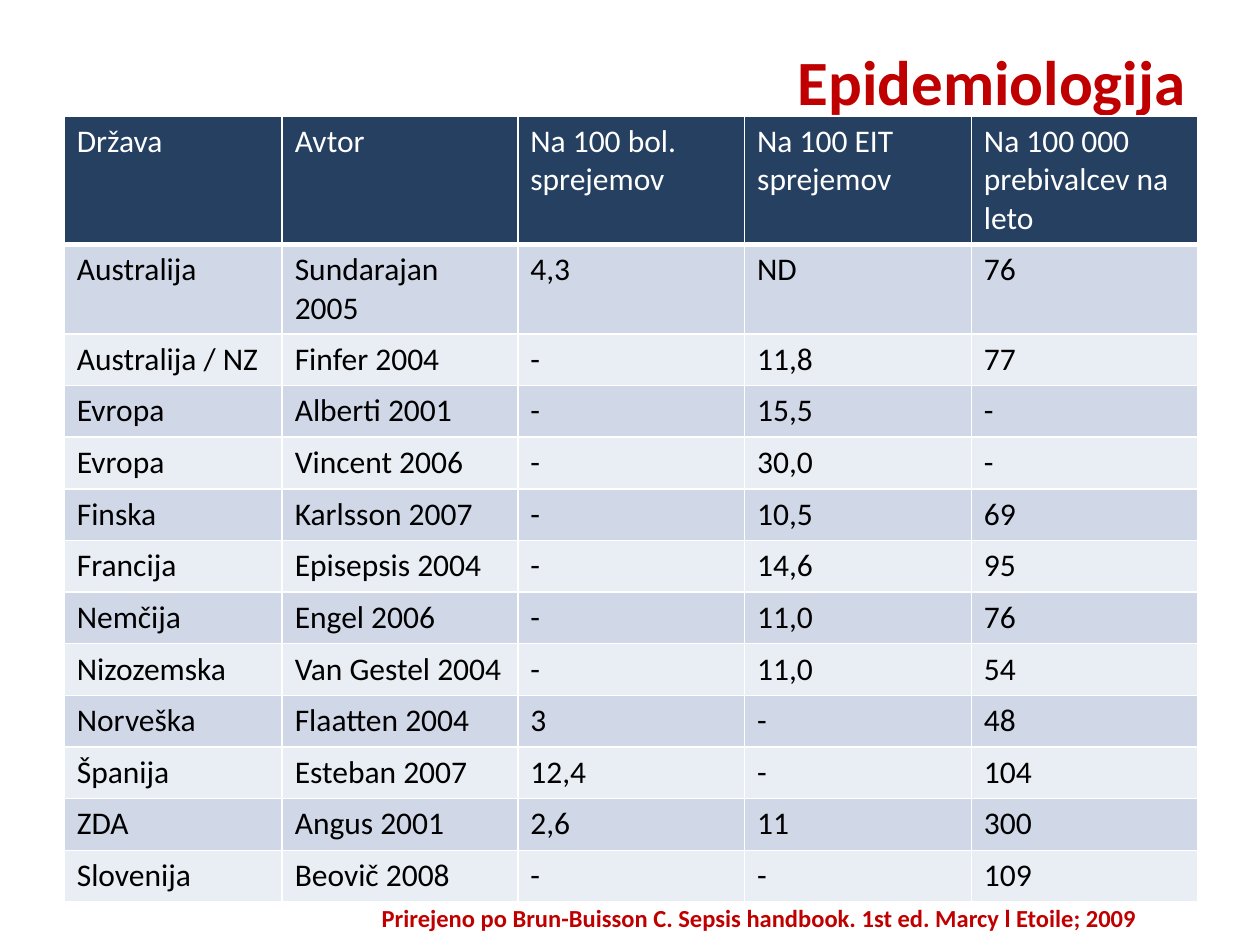
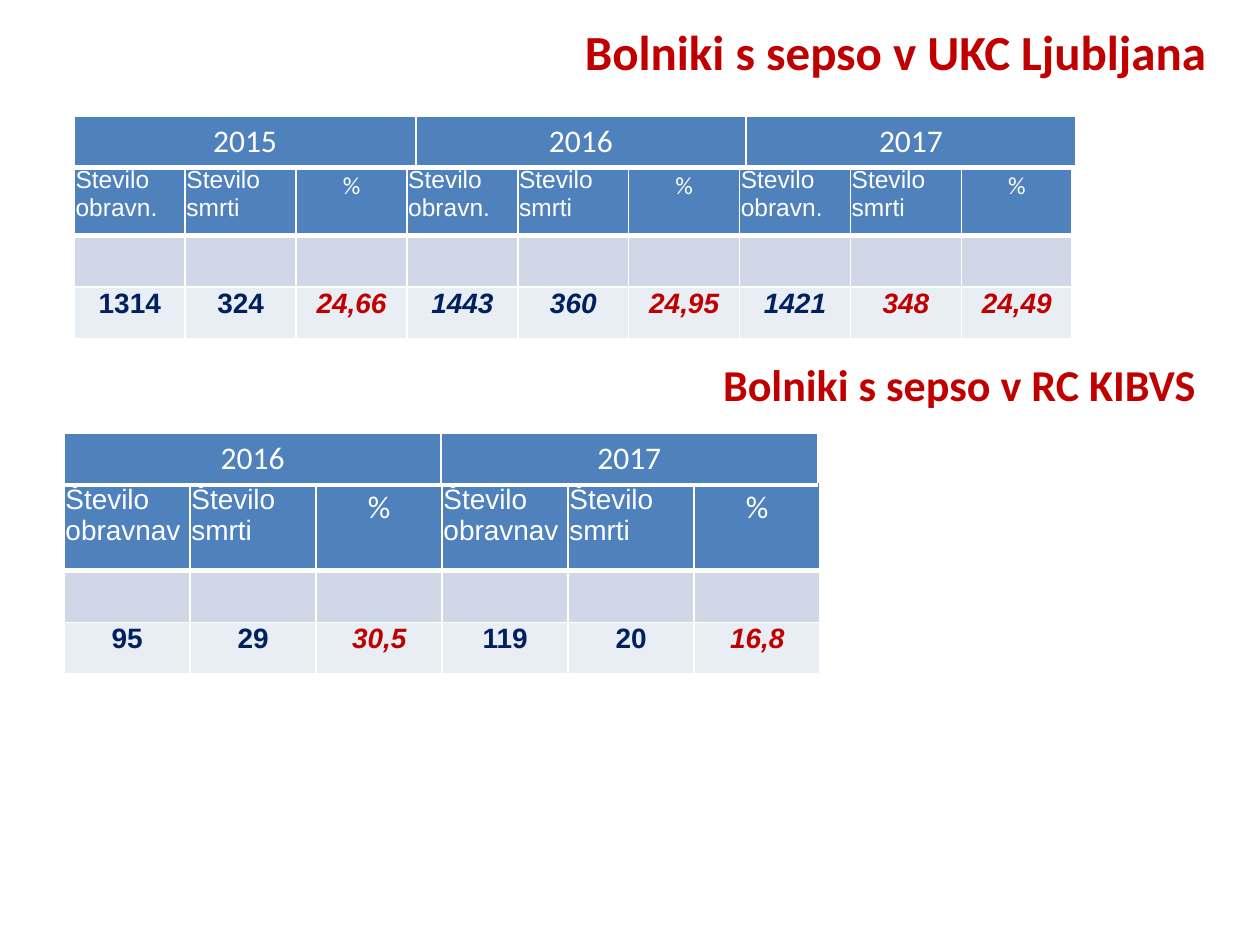
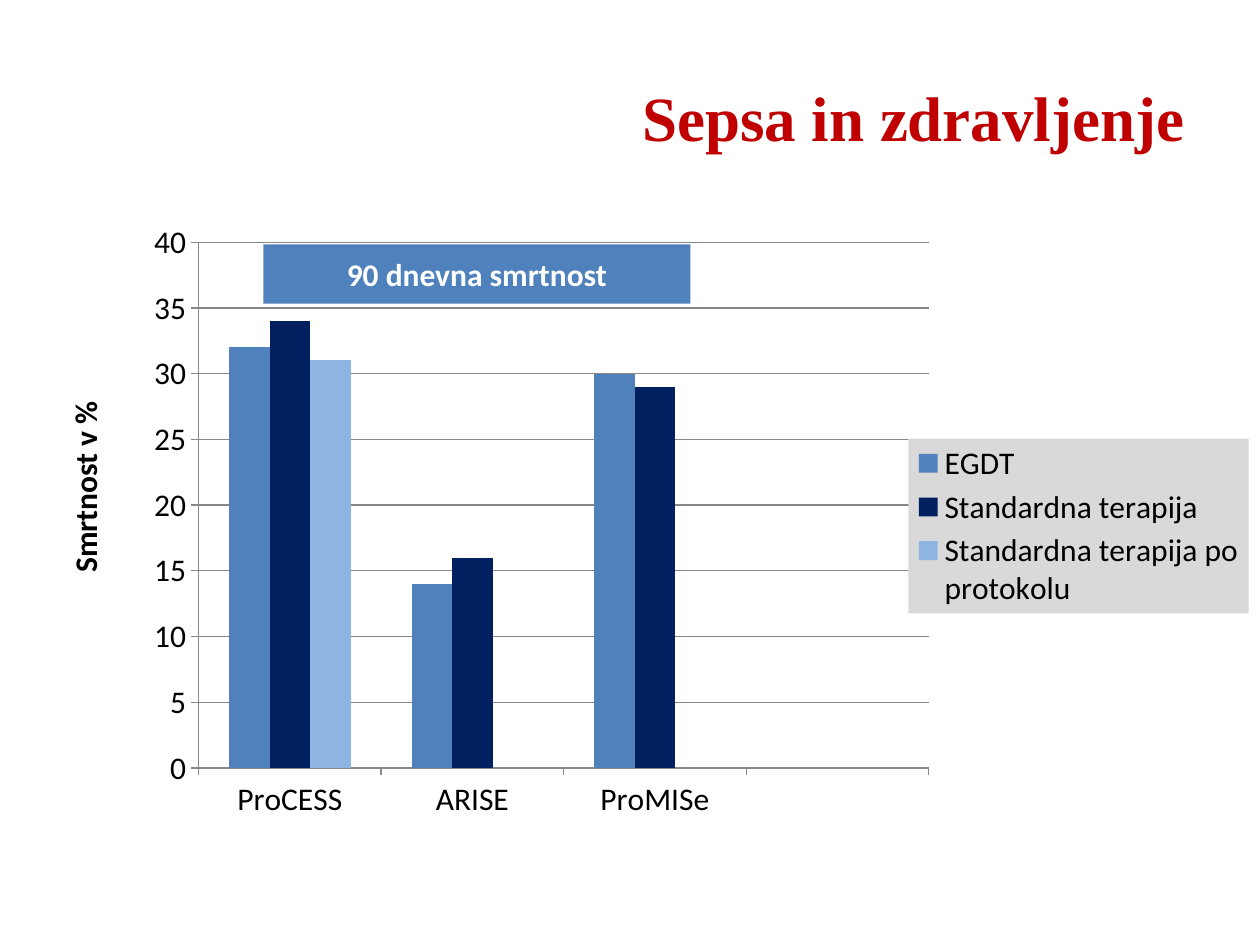
from dataclasses import dataclass

from lxml.etree import SubElement
from pptx import Presentation
from pptx.chart.data import CategoryChartData
from pptx.dml.color import RGBColor
from pptx.enum.chart import XL_CHART_TYPE as ChartType
from pptx.enum.chart import XL_LEGEND_POSITION as LegendPos
from pptx.enum.chart import XL_TICK_MARK as Tick
from pptx.enum.shapes import MSO_SHAPE as Shape
from pptx.enum.text import MSO_ANCHOR as Anchor
from pptx.enum.text import PP_ALIGN as Align
from pptx.oxml import parse_xml
from pptx.oxml.ns import nsdecls, qn
from pptx.util import Inches, Pt


@dataclass(frozen=True)
class Theme:
    red: str = "C00000"
    navy: str = "002060"
    header: str = "254061"
    blue: str = "4F81BD"
    light_blue: str = "8EB4E3"
    bands: tuple = ("D0D8E8", "E9EDF4")
    grid: str = "878787"
    legend: str = "D9D9D9"
    white: str = "FFFFFF"
    black: str = "000000"
    body_font: str = "Calibri"
    number_font: str = "Arial"
    serif_font: str = "Times New Roman"
    title: float = 36
    subtitle: float = 28
    small_title: float = 25.2
    body: float = 18
    number: float = 16
    note: float = 14


T = Theme()
ROW = 0.41
TIGHT = (0.01, 0.01, 0.01, 0)

INCIDENCE = [
    ("Država", "Avtor", "Na 100 bol. sprejemov", "Na 100 EIT sprejemov",
     "Na 100 000 prebivalcev na leto"),
    ("Australija", "Sundarajan 2005", "4,3", "ND", "76"),
    ("Australija / NZ", "Finfer 2004", "-", "11,8", "77"),
    ("Evropa", "Alberti 2001", "-", "15,5", "-"),
    ("Evropa", "Vincent 2006", "-", "30,0", "-"),
    ("Finska", "Karlsson 2007", "-", "10,5", "69"),
    ("Francija", "Episepsis 2004", "-", "14,6", "95"),
    ("Nemčija", "Engel 2006", "-", "11,0", "76"),
    ("Nizozemska", "Van Gestel 2004", "-", "11,0", "54"),
    ("Norveška", "Flaatten 2004", "3", "-", "48"),
    ("Španija", "Esteban 2007", "12,4", "-", "104"),
    ("ZDA", "Angus 2001", "2,6", "11", "300"),
    ("Slovenija", "Beovič 2008", "-", "-", "109"),
]

# Each value: text, colour, italic
UKC_VALUES = [
    ("1314", T.navy, False), ("324", T.navy, False), ("24,66", T.red, True),
    ("1443", T.navy, True), ("360", T.navy, True), ("24,95", T.red, True),
    ("1421", T.navy, True), ("348", T.red, True), ("24,49", T.red, True),
]
KIBVS_VALUES = [
    ("95", T.navy, False), ("29", T.navy, False), ("30,5", T.red, True),
    ("119", T.navy, False), ("20", T.navy, False), ("16,8", T.red, True),
]

TRIALS = ("ProCESS", "ARISE", "ProMISe", "")
MORTALITY = [
    ("EGDT", (32, 14, 30, None), T.blue),
    ("Standardna terapija", (34, 16, 29, None), T.navy),
    ("Standardna terapija po protokolu", (31, None, None, None), T.light_blue),
]


def rgb(color):
    return RGBColor.from_string(color)


def set_font(font, size, color, name=T.body_font, bold=False, italic=False):
    font.size, font.name = Pt(size), name
    font.bold, font.italic = bold, italic
    font.color.rgb = rgb(color)


def set_fill(fill, color):
    fill.solid()
    fill.fore_color.rgb = rgb(color)


def set_text(tf, text, size, color, align=Align.LEFT, **font):
    tf.text = text
    p = tf.paragraphs[0]
    p.alignment = align
    set_font(p.runs[0].font, size, color, **font)


def add_text(slide, box, text, size, color=T.red, align=Align.CENTER,
             rotation=0, **font):
    sp = slide.shapes.add_textbox(*map(Inches, box))
    sp.rotation = rotation
    tf = sp.text_frame
    tf.word_wrap = True
    tf.vertical_anchor = Anchor.MIDDLE
    set_text(tf, text, size, color, align, bold=True, **font)


def add_title(slide, box, text, size, **font):
    add_text(slide, box, text, size, align=Align.RIGHT, **font)


def add_grid(slide, left, top, widths, heights):
    sp = slide.shapes.add_table(len(heights), len(widths), Inches(left), Inches(top),
                                Inches(sum(widths)), Inches(sum(heights)))
    table = sp.table
    table.horz_banding = False
    for column, width in zip(table.columns, widths):
        column.width = Inches(width)
    for row, height in zip(table.rows, heights):
        row.height = Inches(height)
    return table


def style_cell(cell, fill, bottom=1):
    """White borders and a solid fill; bottom is the lower border in points."""
    tc_pr = cell._tc.get_or_add_tcPr()
    for side, width in (("L", 1), ("R", 1), ("T", 1), ("B", bottom)):
        ln = SubElement(tc_pr, qn(f"a:ln{side}"), w=str(Pt(width)))
        solid = SubElement(ln, qn("a:solidFill"))
        SubElement(solid, qn("a:srgbClr"), val=T.white)
    set_fill(cell.fill, fill)


def set_margins(cell, margins):
    (cell.margin_left, cell.margin_top,
     cell.margin_right, cell.margin_bottom) = map(Inches, margins)


def add_incidence_table(slide):
    heights = [1.02, 0.71] + [ROW] * (len(INCIDENCE) - 2)
    table = add_grid(slide, 0.51, 0.92, [1.73, 1.87, 1.8, 1.8, 1.8], heights)
    for i, row in enumerate(INCIDENCE):
        for j, text in enumerate(row):
            cell = table.cell(i, j)
            if i == 0:
                style_cell(cell, T.header, bottom=3)
            else:
                style_cell(cell, T.bands[(i - 1) % 2])
            set_text(cell.text_frame, text, T.body, T.black if i else T.white)


def add_year_table(slide, left, top, years, widths):
    table = add_grid(slide, left, top, widths, [ROW])
    for j, year in enumerate(years):
        cell = table.cell(0, j)
        style_cell(cell, T.blue, bottom=3)
        set_text(cell.text_frame, year, T.body, T.white, Align.CENTER)


def add_outcome_table(slide, left, top, col_width, head_height, cases, values,
                      label_size, percent_size):
    """Cases, deaths and percentage for each year, side by side."""
    table = add_grid(slide, left, top, [col_width] * len(values),
                     [head_height, ROW, ROW])
    labels = (cases, "Število smrti", "%")
    for j, (value, color, italic) in enumerate(values):
        head, gap, result = (table.cell(i, j) for i in range(3))
        style_cell(head, T.blue, bottom=3)
        style_cell(gap, T.bands[0])
        style_cell(result, T.bands[1])
        label = labels[j % 3]
        if label == "%":
            set_text(head.text_frame, label, percent_size, T.white, Align.CENTER)
        else:
            set_margins(head, TIGHT)
            set_text(head.text_frame, label, label_size, T.white, name=T.number_font)
        set_margins(result, TIGHT)
        set_text(result.text_frame, value, T.number, color, Align.CENTER,
                 name=T.number_font, bold=True, italic=italic)


def set_layout(element, x, y, w, h, inner=False):
    """Place a plot area or legend by fractions of the chart's size."""
    for old in element.findall(qn("c:layout")):
        element.remove(old)
    target = '<c:layoutTarget val="inner"/>' if inner else ""
    layout = parse_xml(
        f'<c:layout {nsdecls("c")}><c:manualLayout>{target}'
        '<c:xMode val="edge"/><c:yMode val="edge"/>'
        f'<c:x val="{x}"/><c:y val="{y}"/><c:w val="{w}"/><c:h val="{h}"/>'
        '</c:manualLayout></c:layout>')
    element.insert(0 if inner else 1, layout)


def add_legend(chart):
    chart.has_legend = True
    legend = chart.legend
    legend.position = LegendPos.RIGHT
    legend.include_in_layout = False
    set_font(legend.font, T.body, T.black)
    set_layout(legend._element, 0.69, 0.36, 0.3, 0.28)
    shape_pr = parse_xml(
        f'<c:spPr {nsdecls("c", "a")}><a:solidFill><a:srgbClr val="{T.legend}"/>'
        '</a:solidFill></c:spPr>')
    legend._element.find(qn("c:txPr")).addprevious(shape_pr)


def add_mortality_chart(slide):
    data = CategoryChartData()
    data.categories = TRIALS
    for name, values, _ in MORTALITY:
        data.add_series(name, values)
    box = map(Inches, (1, 1.7, 9, 4.95))
    chart = slide.shapes.add_chart(ChartType.COLUMN_CLUSTERED, *box, data).chart
    chart.has_title = False
    set_font(chart.font, T.body, T.black)

    plot = chart.plots[0]
    plot.gap_width, plot.overlap = 150, 0
    plot.vary_by_categories = False
    for series, (_, _, color) in zip(plot.series, MORTALITY):
        set_fill(series.format.fill, color)

    value_axis = chart.value_axis
    value_axis.minimum_scale, value_axis.maximum_scale = 0, 40
    value_axis.major_unit = 5
    value_axis.has_major_gridlines = True
    value_axis.major_gridlines.format.line.color.rgb = rgb(T.grid)
    for axis in (chart.category_axis, value_axis):
        axis.major_tick_mark = Tick.OUTSIDE
        axis.format.line.color.rgb = rgb(T.grid)
        set_font(axis.tick_labels.font, T.body, T.black)

    set_layout(chart._chartSpace.chart.plotArea, 0.064, 0.045, 0.644, 0.843, inner=True)
    add_legend(chart)


def add_banner(slide, box, text):
    sp = slide.shapes.add_shape(Shape.RECTANGLE, *map(Inches, box))
    sp.shadow.inherit = False
    set_fill(sp.fill, T.blue)
    sp.line.fill.background()
    sp.text_frame.vertical_anchor = Anchor.MIDDLE
    set_text(sp.text_frame, text, T.body, T.white, Align.CENTER, bold=True)


def build_epidemiology(slide):
    add_title(slide, (0.51, 0.13, 9, 1.02), "Epidemiologija", T.title)
    add_incidence_table(slide)
    add_text(slide, (2.64, 7.06, 6.77, 0.44),
             "Prirejeno po Brun-Buisson C. Sepsis handbook. 1st ed. Marcy l Etoile; 2009",
             T.note)


def build_patients(slide):
    add_title(slide, (0.59, 2.81, 9, 0.47), "Bolniki s sepso v RC KIBVS", T.small_title)
    add_outcome_table(slide, 0.59, 1.31, 0.88, 0.56, "Število obravn.", UKC_VALUES,
                      T.note, T.note)
    add_year_table(slide, 0.59, 0.92, ("2015", "2016", "2017"), (2.71, 2.62, 2.62))
    add_outcome_table(slide, 0.51, 3.83, 1, 0.7, "Število obravnav", KIBVS_VALUES,
                      T.number, T.body)
    add_year_table(slide, 0.51, 3.44, ("2016", "2017"), (2.99, 2.99))
    add_title(slide, (0.67, 0.05, 9, 0.71), "Bolniki s sepso v UKC Ljubljana", T.subtitle)


def build_treatment(slide):
    add_mortality_chart(slide)
    add_text(slide, (-1.1, 3.47, 3.54, 0.79), "Smrtnost v %", T.body, T.black,
             rotation=270)
    add_title(slide, (0.5, 0.3, 9, 1.25), "Sepsa in zdravljenje", T.title,
              name=T.serif_font)
    add_banner(slide, (2.09, 1.94, 3.39, 0.47), "90 dnevna smrtnost")


def main():
    prs = Presentation()
    prs.slide_width, prs.slide_height = Inches(10), Inches(7.5)
    for build in (build_epidemiology, build_patients, build_treatment):
        build(prs.slides.add_slide(prs.slide_layouts[6]))
    prs.save("out.pptx")


if __name__ == "__main__":
    main()
